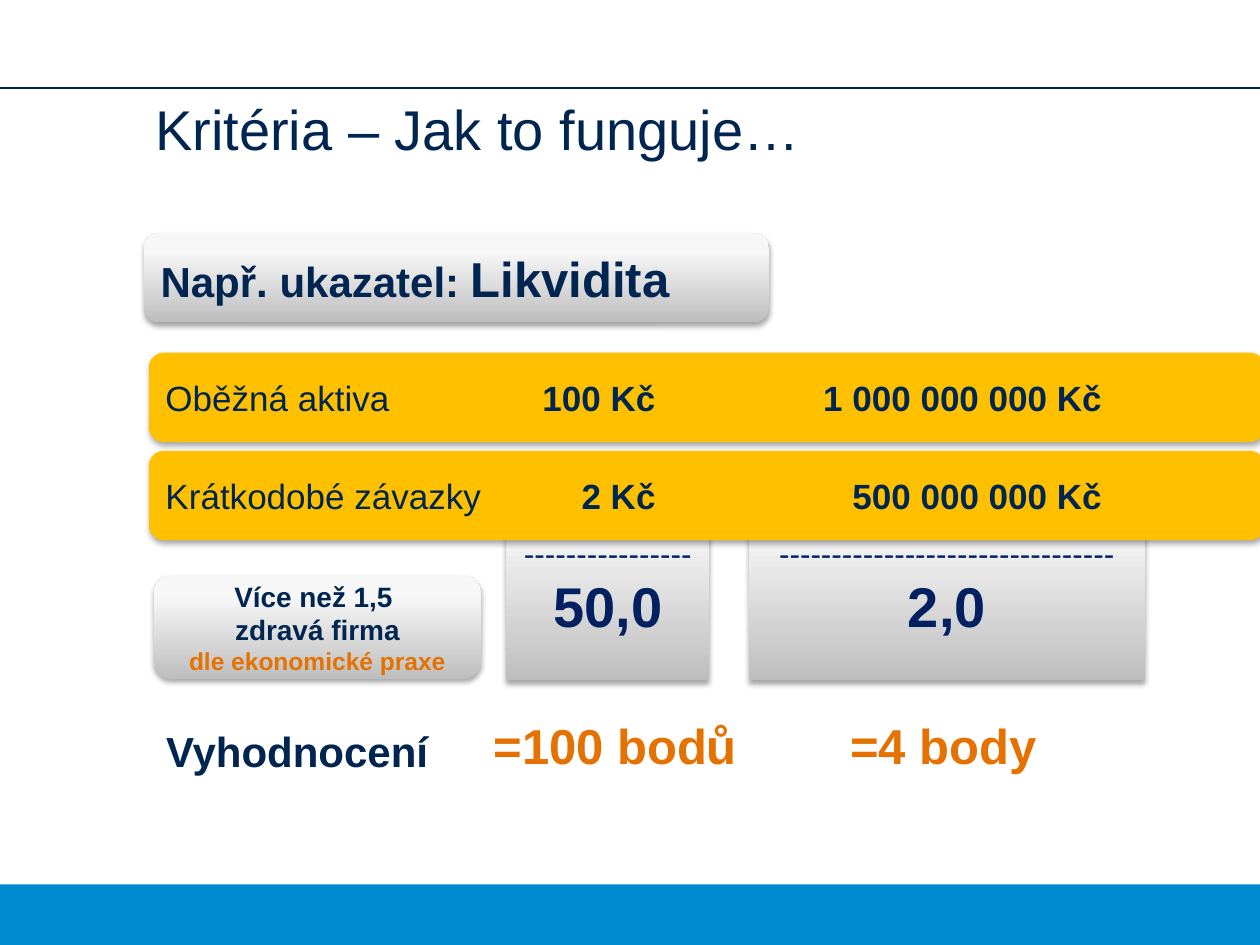
"""Build the slide that explains how the liquidity criterion is scored."""
from lxml.etree import SubElement
from pptx import Presentation
from pptx.dml.color import RGBColor
from pptx.enum.shapes import MSO_CONNECTOR, MSO_SHAPE
from pptx.enum.text import MSO_ANCHOR, MSO_AUTO_SIZE, PP_ALIGN
from pptx.oxml import parse_xml
from pptx.oxml.ns import nsdecls, qn
from pptx.util import Cm, Pt

NAVY = RGBColor(0x00, 0x25, 0x51)
INDIGO = RGBColor(0x00, 0x20, 0x60)
ORANGE = RGBColor(0xE5, 0x72, 0x00)
AMBER = RGBColor(0xFF, 0xC0, 0x00)
BLUE = RGBColor(0x00, 0x8B, 0xD0)
GREY = RGBColor(0xBE, 0xBE, 0xBE)
PALE = RGBColor(0xF7, 0xF7, 0xF7)
SHADOW = (
    f'<a:effectLst {nsdecls("a")}><a:outerShdw blurRad="40000" dist="23000" '
    'dir="5400000" rotWithShape="0"><a:srgbClr val="000000">'
    '<a:alpha val="35000"/></a:srgbClr></a:outerShdw></a:effectLst>'
)


def add_run(paragraph, text, size, color=NAVY, bold=True):
    run = paragraph.add_run()
    run.text = text
    run.font.name = "Arial"
    run.font.size = Pt(size)
    run.font.bold = bold
    run.font.color.rgb = color


def add_box(kind, left, top, width, height, align, color=None):
    box = slide.shapes.add_shape(kind, Cm(left), Cm(top), Cm(width), Cm(height))
    box.line.fill.background()
    if color is None:
        box.fill.gradient()
        box.fill.gradient_angle = 90
        for stop, position, shade in zip(box.fill.gradient_stops, (0, 0.8), (GREY, PALE)):
            stop.position = position
            stop.color.rgb = shade
    else:
        box.fill.solid()
        box.fill.fore_color.rgb = color
    box._element.spPr.append(parse_xml(SHADOW))
    frame = box.text_frame
    frame.word_wrap = True
    frame.vertical_anchor = MSO_ANCHOR.MIDDLE
    frame.paragraphs[0].alignment = align
    return frame


prs = Presentation()
prs.slide_width, prs.slide_height = Cm(25.4), Cm(19.05)
slide = prs.slides.add_slide(prs.slide_layouts[5])

footer = slide.shapes.add_shape(MSO_SHAPE.RECTANGLE, 0, Cm(17.83), Cm(25.4), Cm(1.22))
footer.shadow.inherit = False
footer.fill.solid()
footer.fill.fore_color.rgb = BLUE
footer.line.fill.background()

header_rule = slide.shapes.add_connector(
    MSO_CONNECTOR.STRAIGHT, 0, Cm(1.78), Cm(25.4), Cm(1.78)
)
header_rule.line.color.rgb = NAVY
header_rule.line.width = Pt(1)
SubElement(header_rule._element.spPr, qn("a:effectLst"))

title = slide.shapes.title
title.left, title.top, title.width, title.height = Cm(3), Cm(1.93), Cm(21.44), Cm(1.5)
heading = title.text_frame
heading.auto_size = MSO_AUTO_SIZE.NONE
heading.vertical_anchor = MSO_ANCHOR.TOP
heading.margin_left = heading.margin_right = Cm(0.13)
heading.margin_top = heading.margin_bottom = Cm(0.13)
heading.paragraphs[0].alignment = PP_ALIGN.LEFT
heading.paragraphs[0].line_spacing = 0.9
add_run(heading.paragraphs[0], "Kritéria – Jak to funguje…", 32, bold=False)

for left, width, dashes, ratio in (
    (15.09, 8, 32, "2,0"),
    (10.21, 4.09, 16, "50,0"),
):
    result = add_box(MSO_SHAPE.RECTANGLE, left, 9.91, width, 3.81, PP_ALIGN.CENTER)
    add_run(result.paragraphs[0], "-" * dashes, 18, INDIGO, False)
    quotient = result.add_paragraph()
    quotient.alignment = PP_ALIGN.CENTER
    add_run(quotient, ratio, 32, INDIGO)

indicator = add_box(MSO_SHAPE.ROUNDED_RECTANGLE, 2.9, 4.7, 12.6, 1.8, PP_ALIGN.LEFT)
add_run(indicator.paragraphs[0], "Např. ukazatel: ", 24)
add_run(indicator.paragraphs[0], "Likvidita", 28)

norm = add_box(MSO_SHAPE.ROUNDED_RECTANGLE, 3.1, 11.61, 6.6, 2.08, PP_ALIGN.CENTER)
add_run(norm.paragraphs[0], "Více než 1,5 ", 16)
norm.paragraphs[0].add_line_break()
add_run(norm.paragraphs[0], "zdravá firma", 16)
practice = norm.add_paragraph()
practice.alignment = PP_ALIGN.CENTER
add_run(practice, "dle ekonomické praxe", 14, ORANGE)

for top, item, small_firm, large_firm in (
    (7.11, "Oběžná aktiva", "100 Kč", "1 000 000 000 Kč"),
    (9.09, "Krátkodobé závazky", "2 Kč", "500 000 000 Kč"),
):
    row = add_box(
        MSO_SHAPE.ROUNDED_RECTANGLE, 3, top, 22.5, 1.8, PP_ALIGN.LEFT, AMBER
    ).paragraphs[0]
    tabs = SubElement(row._p.get_or_add_pPr(), qn("a:tabLst"))
    for position in (9.88, 18.88):
        SubElement(tabs, qn("a:tab"), pos=str(Cm(position)), algn="r")
    add_run(row, item, 20, bold=False)
    add_run(row, f"\t{small_firm}\t{large_firm}", 20)

for left, top, width, height, wording, size, color in (
    (3.1, 14.5, 6.4, 1.27, "Vyhodnocení", 24, NAVY),
    (9.7, 14.3, 6, 1.45, "=100 bodů", 28, ORANGE),
    (16.89, 14.3, 6, 1.45, "=4 body", 28, ORANGE),
):
    score = slide.shapes.add_textbox(Cm(left), Cm(top), Cm(width), Cm(height)).text_frame
    score.word_wrap = True
    add_run(score.paragraphs[0], wording, size, color)

prs.save("out.pptx")
